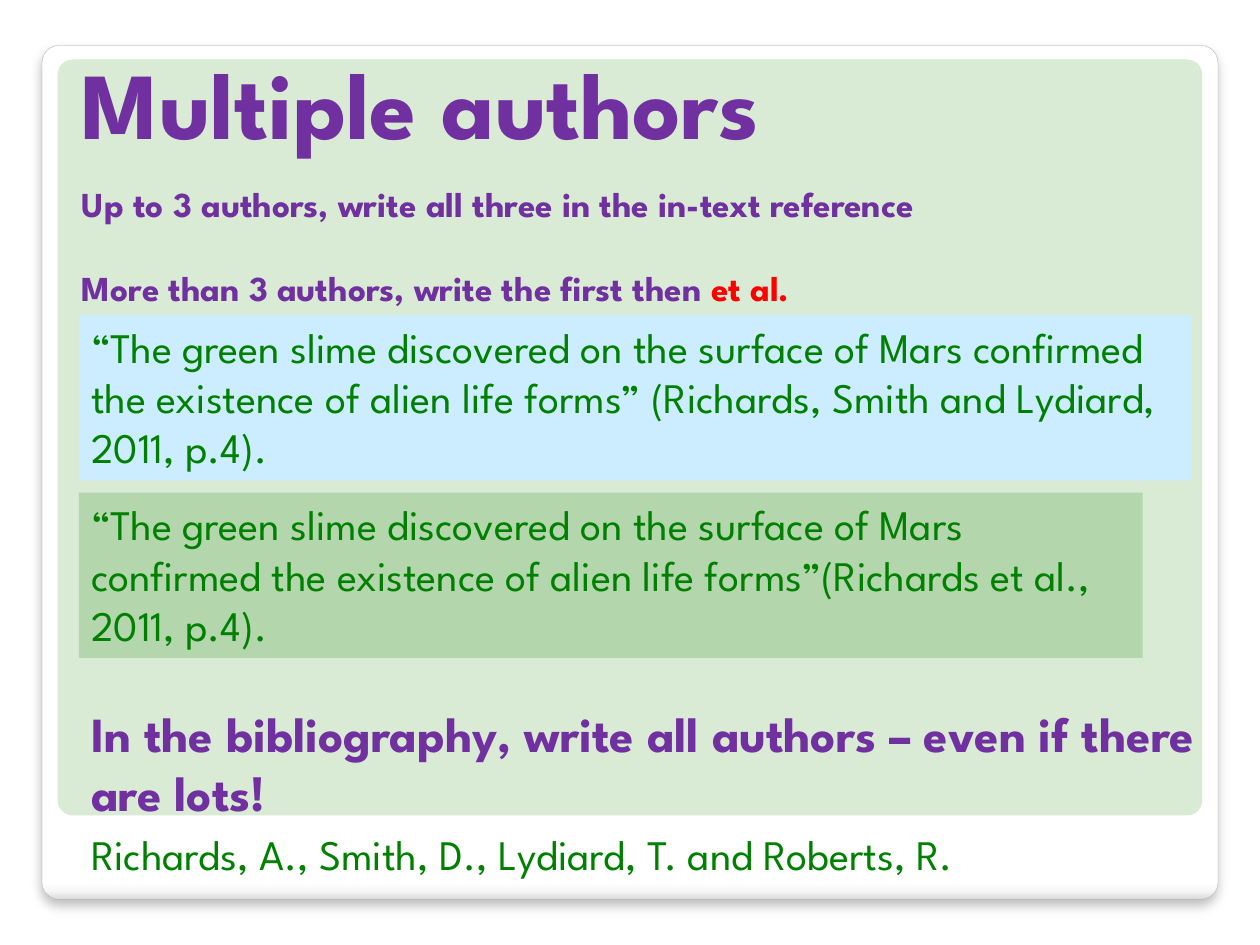
from lxml import etree
from pptx import Presentation
from pptx.dml.color import RGBColor
from pptx.enum.shapes import MSO_SHAPE as Shape
from pptx.enum.text import MSO_ANCHOR as Anchor, MSO_AUTO_SIZE as AutoSize, PP_ALIGN as Align
from pptx.oxml import parse_xml
from pptx.oxml.ns import nsdecls, qn
from pptx.util import Pt

COLORS = {
    "purple": "7030A0", "green": "008000", "red": "FF0000",
    "white": "FFFFFF", "near_white": "F7F7F7", "grey": "DADADA", "edge": "A4A4A4",
    "panel": "D9EAD5", "blue_box": "CCECFF", "green_box": "B3D6AC",
}
FONT = "League Spartan"


def rgb(name):
    return RGBColor.from_string(COLORS[name])


def write(paragraph, text, size=24, color="green", bold=False, before=0):
    paragraph.alignment = Align.LEFT
    paragraph.space_before = Pt(before)
    run = paragraph.add_run()
    run.text = text
    run.font.name = FONT
    run.font.size = Pt(size)
    run.font.bold = bold
    run.font.color.rgb = rgb(color)


prs = Presentation()
prs.slide_width, prs.slide_height = Pt(720), Pt(540)
slide = prs.slides.add_slide(prs.slide_layouts[5])
shapes = slide.shapes

# White card and green panel
card = shapes.add_shape(Shape.ROUNDED_RECTANGLE, Pt(24), Pt(26), Pt(672), Pt(488))
panel = shapes.add_shape(Shape.ROUNDED_RECTANGLE, Pt(33), Pt(34), Pt(654), Pt(432))
for backdrop in (card, panel):
    backdrop.adjustments[0] = 0.02
    backdrop.shadow.inherit = False
panel.fill.solid()
panel.fill.fore_color.rgb = rgb("panel")
panel.line.fill.background()
card.line.color.rgb = rgb("edge")
card.line.width = Pt(0.16)

# Card shading along the bottom edge
card.fill.gradient()
card.fill.gradient_angle = 270
stops = card.element.spPr.find(f".//{qn('a:gsLst')}")
for stop in list(stops):
    stops.remove(stop)
for percent, shade in ((0, "white"), (98, "white"), (99, "near_white"), (100, "grey")):
    stop = etree.SubElement(stops, qn("a:gs"), pos=str(percent * 1000))
    etree.SubElement(stop, qn("a:srgbClr"), val=COLORS[shade])

# Card shadow
card.element.spPr.find(qn("a:effectLst")).append(parse_xml(
    f'<a:outerShdw {nsdecls("a")} blurRad="{Pt(6)}" dist="{Pt(4)}" dir="5400000" '
    'algn="t" rotWithShape="0"><a:srgbClr val="000000"><a:alpha val="25000"/>'
    '</a:srgbClr></a:outerShdw>'))

# Title with the two rules, in front of the panel
title = shapes.title
shapes.element.append(title.element)
title.left, title.top, title.width, title.height = Pt(39.6), Pt(62), Pt(664), Pt(118)
heading = title.text_frame
heading.auto_size = AutoSize.NONE
heading.vertical_anchor = Anchor.BOTTOM
write(heading.paragraphs[0], "Multiple authors", size=54, color="purple", bold=True)
write(heading.add_paragraph(), "Up to 3 authors, write all three in the in-text reference",
      size=20, color="purple", bold=True, before=14)
more_than_three = heading.add_paragraph()
write(more_than_three, "More than 3 authors, write the first then ",
      size=20, color="purple", bold=True, before=24)
write(more_than_three, "et al.", size=20, color="red", bold=True, before=24)

# Bibliography example
entry = shapes.add_textbox(Pt(45), Pt(470), Pt(601), Pt(36)).text_frame
entry.word_wrap = False
write(entry.paragraphs[0], "Richards, A., Smith, D., Lydiard, T. and Roberts, R.")

# Quotation examples
QUOTE = "“The green slime discovered on the surface of Mars confirmed the existence of alien life forms”"
for top, width, fill, citation in (
    (180, 636, "blue_box", " (Richards, Smith and Lydiard, 2011, p.4)."),
    (281.5, 608, "green_box", "(Richards et al., 2011, p.4)."),
):
    quotation = shapes.add_textbox(Pt(45), Pt(top), Pt(width), Pt(94.5))
    quotation.fill.solid()
    quotation.fill.fore_color.rgb = rgb(fill)
    quotation.text_frame.word_wrap = True
    write(quotation.text_frame.paragraphs[0], QUOTE + citation)

# Bibliography rule
rule = shapes.add_textbox(Pt(45), Pt(400), Pt(664), Pt(73)).text_frame
rule.word_wrap = True
rule.vertical_anchor = Anchor.BOTTOM
write(rule.paragraphs[0], "In the bibliography, write all authors – even if there are lots!",
      size=28, color="purple", bold=True)

prs.save("out.pptx")
